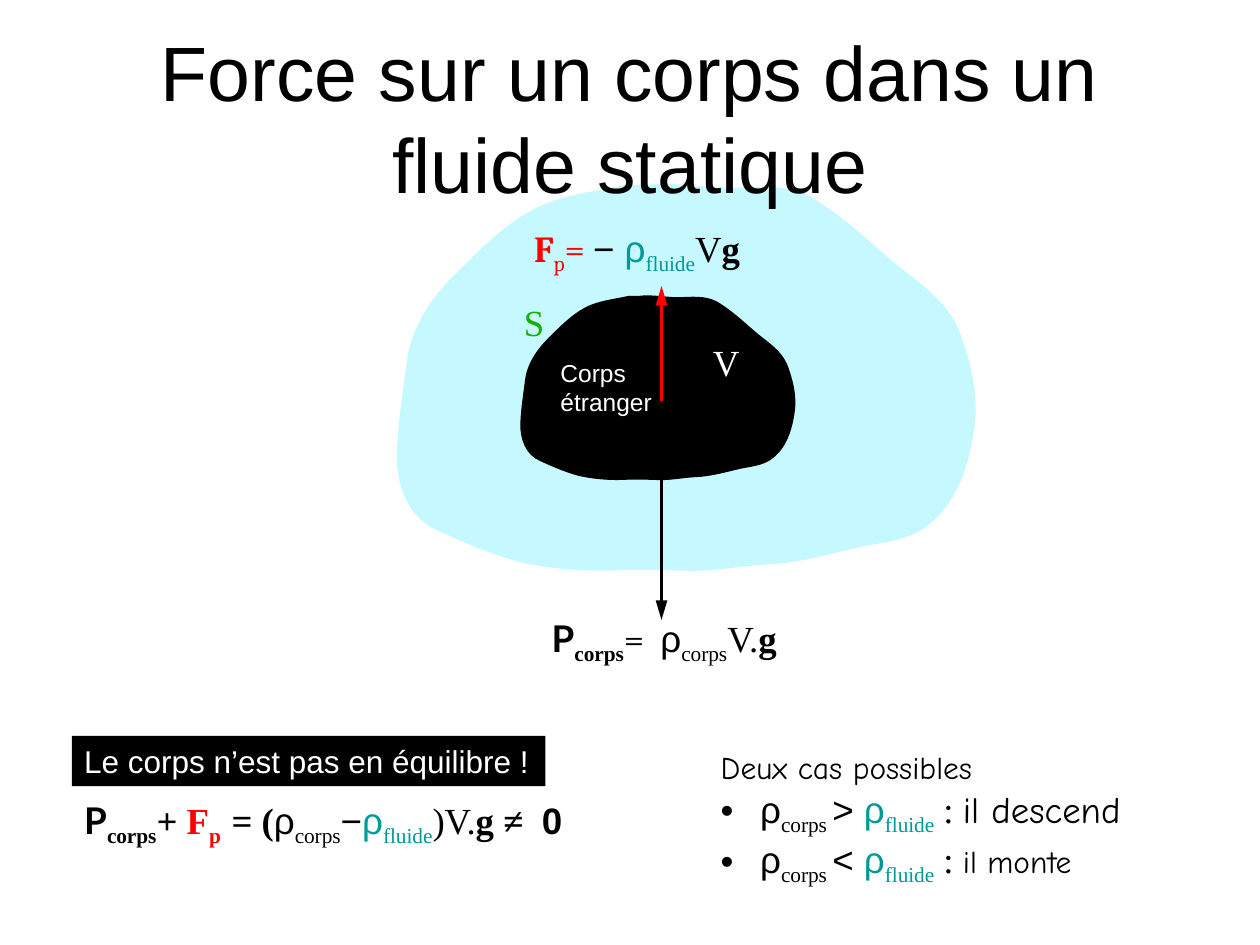
from lxml.etree import SubElement
from pptx import Presentation
from pptx.dml.color import RGBColor
from pptx.enum.shapes import MSO_CONNECTOR, MSO_SHAPE
from pptx.enum.text import MSO_ANCHOR, MSO_AUTO_SIZE, PP_ALIGN
from pptx.oxml.ns import qn
from pptx.util import Inches, Pt

HUES = {"black": "000000", "white": "FFFFFF", "red": "FF0000",
        "teal": "009999", "green": "15B003", "water": "C6F9FF"}
TIMES, ARIAL, CAMBRIA = "Times New Roman", "Arial", "Cambria"
LATO, COMIC = "Lato", "Comic Neue"


def hue(name):
    return RGBColor.from_string(HUES[name])


def write(frame, lines):
    """Fill the frame; a run is (text, font, colour, marks, size), marks b = bold, s = subscript."""
    for i, line in enumerate(lines):
        para = frame.paragraphs[0] if i == 0 else frame.add_paragraph()
        para.space_before = Pt(0)
        for text, face, tint, marks, size in line:
            run = para.add_run()
            run.text = text
            run.font.name = face
            run.font.size = Pt(size)
            run.font.bold = "b" in marks
            run.font.color.rgb = hue(tint)
            if "s" in marks:
                run._r.get_or_add_rPr().set("baseline", "-25000")


deck = Presentation()
deck.slide_width, deck.slide_height = Inches(10), Inches(7.5)
slide = deck.slides.add_slide(deck.slide_layouts[1])
shapes = slide.shapes

# Fluid and body: the same curve at two scales, each row two controls and an end
start = (4.95, 1.47)
curve = [
    (4.73, 1.52, 4.51, 1.54, 4.3, 1.63), (4.05, 1.74, 3.84, 1.95, 3.65, 2.14),
    (3.45, 2.33, 3.27, 2.57, 3.23, 2.86), (3.2, 3.1, 3.16, 3.34, 3.15, 3.59),
    (3.14, 3.85, 3.24, 4.11, 3.47, 4.21), (3.69, 4.31, 3.9, 4.4, 4.12, 4.46),
    (4.34, 4.51, 4.56, 4.53, 4.78, 4.53), (5, 4.52, 5.21, 4.52, 5.43, 4.53),
    (5.65, 4.54, 5.88, 4.49, 6.1, 4.48), (6.32, 4.47, 6.54, 4.41, 6.75, 4.36),
    (6.97, 4.3, 7.22, 4.31, 7.4, 4.14), (7.61, 3.96, 7.69, 3.68, 7.73, 3.42),
    (7.77, 3.18, 7.72, 2.93, 7.64, 2.7), (7.55, 2.39, 7.29, 2.25, 7.08, 2.07),
    (6.87, 1.89, 6.67, 1.7, 6.43, 1.56), (6.22, 1.45, 5.99, 1.49, 5.78, 1.49),
    (5.56, 1.49, 5.34, 1.44, 5.12, 1.47),
]
dots = [start]
for row in curve:
    dots += [row[:2], row[2:4], row[4:]]

for left, top, wide, high, tint in [(3.14, 1.44, 4.63, 3.1, "water"),
                                    (4.13, 2.34, 2.19, 1.47, "black")]:
    spots = [(Inches(left + (x - 3.14) * wide / 4.63),
              Inches(top + (y - 1.44) * high / 3.1)) for x, y in dots]
    pen = shapes.build_freeform(*spots[0])
    pen.add_line_segments(spots[1:], close=True)
    blob = pen.convert_to_shape()
    # Bend every three straight steps into one cubic curve
    steps = list(blob._element.iter(qn("a:lnTo")))
    for n in range(0, len(steps), 3):
        steps[n].tag = qn("a:cubicBezTo")
        for step in steps[n + 1:n + 3]:
            steps[n].append(step[0])
            step.getparent().remove(step)
    blob.shadow.inherit = False
    blob.fill.solid()
    blob.fill.fore_color.rgb = hue(tint)
    if tint == "black":
        blob.line.color.rgb = hue(tint)
        blob.line.width = Pt(0.75)
    else:
        blob.line.fill.background()

# Forces
for tint, end in [("red", 2.27), ("black", 4.92)]:
    arrow = shapes.add_connector(MSO_CONNECTOR.STRAIGHT, Inches(5.25), Inches(3.18),
                                 Inches(5.25), Inches(end))
    arrow.line.width = Pt(2.25)
    arrow.line.color.rgb = hue(tint)
    SubElement(arrow.line._get_or_add_ln(), qn("a:tailEnd"), type="triangle", len="lg")
    SubElement(arrow._element.spPr, qn("a:effectLst"))

# Labels and formulas
rho = ("ρ", ARIAL, "black", "", 21)
rho_fluid = [("ρ", ARIAL, "teal", "", 21), ("fluide", TIMES, "teal", "s", 21)]
weight = [("P", LATO, "black", "b", 21), ("corps", TIMES, "black", "bs", 21)]
sub = ("corps", TIMES, "black", "s", 21)

labels = [
    (5.56, 2.65, 0.38, 0.45, [[("V", TIMES, "white", "", 21)]]),
    (4.06, 2.33, 0.37, 0.45, [[("S", TIMES, "green", "", 21)]]),
    (4.35, 2.79, 0.93, 0.57, [[("Corps", ARIAL, "white", "", 14)],
                              [("étranger", ARIAL, "white", "", 14)]]),
    (4.14, 1.74, 1.93, 0.45, [[
        ("F", CAMBRIA, "red", "b", 21), ("p", CAMBRIA, "red", "s", 21),
        ("= ", CAMBRIA, "red", "", 21), ("− ", ARIAL, "black", "", 21),
        *rho_fluid, ("V", TIMES, "black", "", 21), ("g", TIMES, "black", "b", 21)]]),
    (4.28, 4.84, 2.15, 0.45, [[
        *weight, ("=  ", CAMBRIA, "black", "", 21), rho, sub,
        ("V.", TIMES, "black", "", 21), ("g", TIMES, "black", "b", 21)]]),
    (0.57, 6.28, 4.18, 0.45, [[
        *weight, ("+ ", TIMES, "black", "b", 21), ("F", TIMES, "red", "b", 21),
        ("p  ", TIMES, "red", "bs", 21), ("= (", TIMES, "black", "b", 21),
        rho, sub, ("−", ARIAL, "black", "", 21), *rho_fluid,
        (")V.", TIMES, "black", "", 21), ("g ≠  ", TIMES, "black", "b", 21),
        ("0", ARIAL, "black", "b", 21)]]),
]
for left, top, wide, high, lines in labels:
    box = shapes.add_textbox(Inches(left), Inches(top), Inches(wide), Inches(high))
    box.text_frame.word_wrap = False
    box.text_frame.auto_size = MSO_AUTO_SIZE.SHAPE_TO_FIT_TEXT
    write(box.text_frame, lines)

# Verdict
bar = shapes.add_shape(MSO_SHAPE.RECTANGLE, Inches(0.57), Inches(5.84),
                       Inches(3.76), Inches(0.4))
bar.shadow.inherit = False
bar.fill.solid()
bar.fill.fore_color.rgb = hue("black")
bar.line.fill.background()
bar.text_frame.word_wrap = False
write(bar.text_frame, [[("Le corps n’est pas en équilibre !", ARIAL, "white", "", 18)]])
bar.text_frame.paragraphs[0].alignment = PP_ALIGN.LEFT

# Two cases
cases = slide.placeholders[1]
cases.left, cases.top = Inches(5.63), Inches(5.9)
cases.width, cases.height = Inches(3.4), Inches(1.1)
frame = cases.text_frame
frame.auto_size = MSO_AUTO_SIZE.NONE
frame.margin_left = frame.margin_right = Inches(0.09)
frame.margin_top = frame.margin_bottom = Inches(0.04)
lines = [[("Deux cas possibles", COMIC, "black", "", 18)]]
for sign, fate, size in [("> ", "il descend", 21), ("< ", "il monte", 18)]:
    lines.append([(" ", TIMES, "black", "", 21), rho, ("corps ", TIMES, "black", "s", 21),
                  (sign, ARIAL, "black", "", 21), *rho_fluid,
                  (" : ", TIMES, "black", "", 21), (fate, COMIC, "black", "", size)])
write(frame, lines)
for i, para in enumerate(frame.paragraphs):
    props = para._p.get_or_add_pPr()
    indent = Inches(0.24) if i else 0
    props.set("marL", str(indent))
    props.set("indent", str(-indent))
    if i:
        SubElement(props, qn("a:buFont"), typeface=ARIAL)
        SubElement(props, qn("a:buChar"), char="•")
    else:
        SubElement(props, qn("a:buNone"))

# Title, in front of the fluid
title = shapes.title
title.left, title.top = Inches(0.5), Inches(0.3)
title.width, title.height = Inches(9), Inches(1.25)
title.text_frame.auto_size = MSO_AUTO_SIZE.NONE
title.text_frame.vertical_anchor = MSO_ANCHOR.MIDDLE
write(title.text_frame, [[("Force sur un corps dans un fluide statique", ARIAL, "black", "", 44)]])
title.text_frame.paragraphs[0].alignment = PP_ALIGN.CENTER
shapes._spTree.append(title._element)

deck.save("out.pptx")
